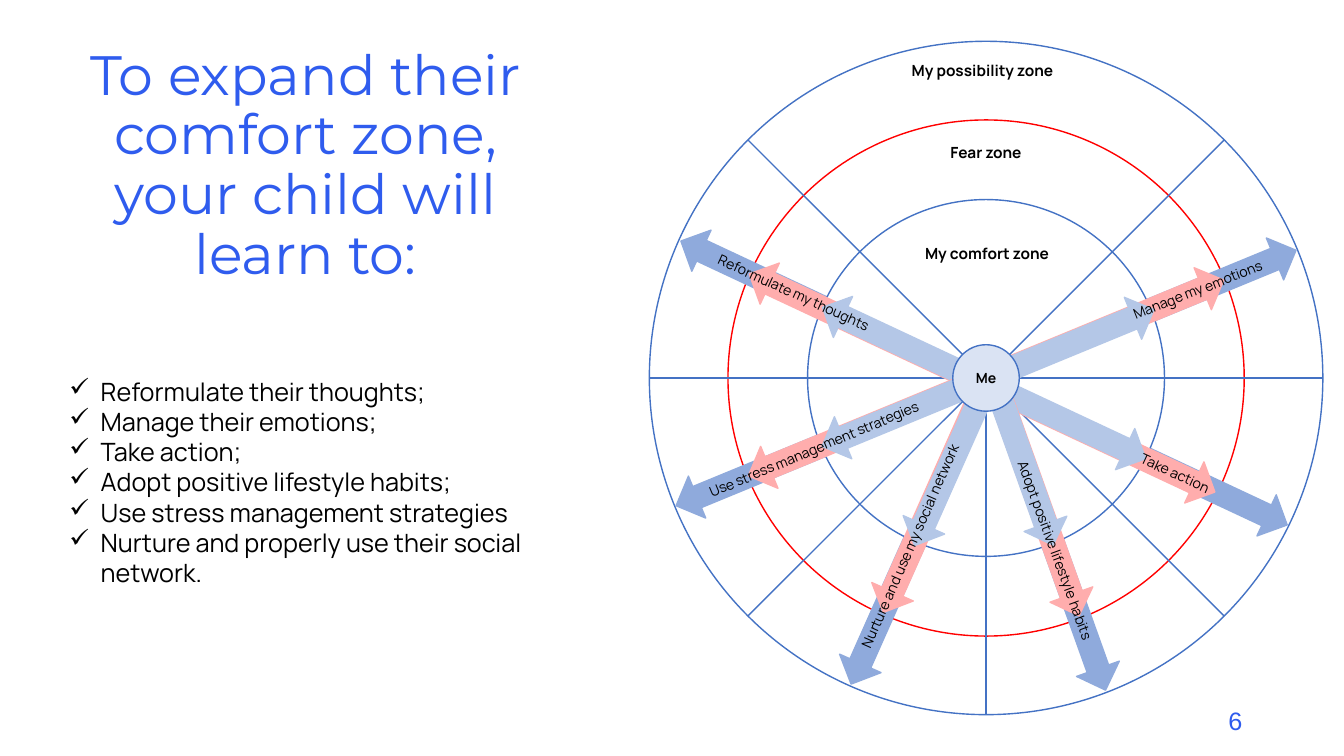
from lxml import etree
from pptx import Presentation
from pptx import util as u
from pptx.dml.color import RGBColor
from pptx.enum import shapes, text
from pptx.oxml.ns import qn

PX = 9144  # 100 px to the inch
INK = RGBColor(0x00, 0x00, 0x00)
WHITE = RGBColor(0xFF, 0xFF, 0xFF)
TITLE = RGBColor(0x2F, 0x5C, 0xEE)
BLUE = RGBColor(0x44, 0x72, 0xC4)
RED = RGBColor(0xFF, 0x00, 0x00)
DEEP = RGBColor(0x8F, 0xAA, 0xDC)
PINK = RGBColor(0xFF, 0xAD, 0xAD)
PALE = RGBColor(0xB4, 0xC7, 0xE7)
CORE = RGBColor(0xDA, 0xE3, 0xF3)

HUB_X, HUB_Y = 978, 375
OUTER, FEAR, COMFORT, ME = 334, 256, 177, 33
ARROW_H = 45
MID = text.PP_ALIGN.CENTER

SKILLS = [
    "Reformulate their thoughts;",
    "Manage their emotions;",
    "Take action;",
    "Adopt positive lifestyle habits;",
    "Use stress management strategies",
    "Nurture and properly use their social network.",
]
# turn, then centre x, centre y and length of the arrow for each zone
AXES = [
    (25.1, {DEEP: (976, 380, 664), PINK: (974, 380, 510), PALE: (976, 380, 354)}),
    (337.6, {DEEP: (978, 375, 665), PINK: (978, 375, 510), PALE: (980, 375, 356)}),
    (294, {DEEP: (921, 506, 378), PINK: (932, 482, 275), PALE: (946, 454, 191)}),
    (250.3, {DEEP: (1034, 510, 371), PINK: (1024, 482, 274), PALE: (1012, 450, 193)}),
]
ZONES = [
    ("My possibility zone", 882, 56, 185),
    ("Fear zone", 920, 137, 116),
    ("My comfort zone", 900, 237, 158),
]
LABELS = [
    ("Reformulate my thoughts", 661, 277, 252, 24.6, MID),
    ("Take action", 1117, 465, 136, 24.7, text.PP_ALIGN.LEFT),
    ("Use stress management strategies", 657, 432, 301, 337.2, MID),
    ("Manage my emotions", 1087, 274, 202, 338.5, MID),
    ("Nurture and use my social network", 757, 528, 292, 293.8, MID),
    ("Adopt positive lifestyle habits", 897, 532, 298, 69.8, MID),
]


def px(*vals):
    return [u.Emu(v * PX) for v in vals]


def style(para, size, color=INK, face="Manrope", bold=False, align=MID):
    para.alignment = align
    font = para.font
    font.size, font.name, font.bold = u.Pt(size), face, bold
    font.color.rgb = color


def add_box(slide, x, y, w, h, wrap=True):
    box = slide.shapes.add_textbox(*px(x, y, w, h))
    box.text_frame.word_wrap = wrap
    return box


def add_label(slide, words, x, y, w, turn=0, align=MID, size=10, bold=False):
    box = add_box(slide, x, y, w, 28, wrap=not bold)
    box.rotation = turn
    para = box.text_frame.paragraphs[0]
    para.text = words
    style(para, size, bold=bold, align=align)


def add_form(slide, kind, x, y, w, h, fill, line):
    """Add a preset shape centred on x, y."""
    form = slide.shapes.add_shape(kind, *px(x - w / 2, y - h / 2, w, h))
    form.shadow.inherit = False
    form.fill.solid()
    form.fill.fore_color.rgb = fill
    form.line.color.rgb = line
    form.line.width = u.Pt(1)
    return form


def add_ring(slide, radius, line, fill=WHITE):
    size = 2 * radius
    return add_form(slide, shapes.MSO_SHAPE.OVAL, HUB_X, HUB_Y, size, size, fill, line)


def add_arrow(slide, axis, color):
    turn, spans = axis
    x, y, size = spans[color]
    kind = shapes.MSO_SHAPE.LEFT_RIGHT_ARROW
    add_form(slide, kind, x, y, size, ARROW_H, color, color).rotation = turn


def add_spoke(slide, x1, y1, x2, y2):
    """Draw a line between two offsets from the hub."""
    ends = px(HUB_X + x1, HUB_Y + y1, HUB_X + x2, HUB_Y + y2)
    line = slide.shapes.add_connector(shapes.MSO_CONNECTOR.STRAIGHT, *ends)
    line.line.color.rgb = BLUE
    line.line.width = u.Pt(1)
    etree.SubElement(line._element.spPr, qn("a:effectLst"))


def add_title(slide):
    title = slide.shapes.title
    title.left, title.top, title.width, title.height = px(58, 123, 490, 145)
    frame = title.text_frame
    frame.word_wrap = True
    frame.vertical_anchor = text.MSO_ANCHOR.MIDDLE
    frame.margin_bottom = px(65)[0]
    para = frame.paragraphs[0]
    para.text = "To expand their comfort zone, your child will learn to:"
    para.line_spacing = 0.9
    style(para, 39.6, TITLE, "Montserrat")


def add_list(slide):
    frame = add_box(slide, 59, 338, 552, 222).text_frame
    frame.margin_top = px(35)[0]
    for i, skill in enumerate(SKILLS):
        para = frame.add_paragraph() if i else frame.paragraphs[0]
        para.text = skill
        props = para._p.get_or_add_pPr()
        props.set("marL", str(31 * PX))
        props.set("indent", str(-31 * PX))
        etree.SubElement(props, qn("a:buChar"), char="✓")
        style(para, 18, align=text.PP_ALIGN.LEFT)


def add_wheel(slide):
    add_ring(slide, OUTER, BLUE)
    add_ring(slide, FEAR, RED)
    for axis in reversed(AXES):
        add_arrow(slide, axis, DEEP)
    add_ring(slide, COMFORT, BLUE)

    slant = round(OUTER / 2 ** 0.5)
    add_spoke(slide, -slant, -slant, slant, slant)
    add_spoke(slide, -slant, slant, slant, -slant)
    add_spoke(slide, 0, OUTER, 0, ME)
    add_spoke(slide, -OUTER, 0, OUTER, 0)

    for axis in AXES:
        add_arrow(slide, axis, PINK)
        add_arrow(slide, axis, PALE)
    for zone in ZONES:
        add_label(slide, *zone, size=11, bold=True)
    for label in LABELS:
        add_label(slide, *label)

    frame = add_ring(slide, ME, BLUE, CORE).text_frame
    frame.vertical_anchor = text.MSO_ANCHOR.MIDDLE
    frame.paragraphs[0].text = "Me"
    style(frame.paragraphs[0], 10, bold=True)


def add_number(slide):
    para = add_box(slide, 942, 695, 300, 40).text_frame.paragraphs[0]
    para.text = "6"
    style(para, 18, TITLE, "Arial", align=text.PP_ALIGN.RIGHT)


def main():
    deck = Presentation()
    deck.slide_width, deck.slide_height = u.Inches(13.33), u.Inches(7.5)
    slide = deck.slides.add_slide(deck.slide_layouts.get_by_name("Title Only"))
    add_title(slide)
    add_number(slide)
    add_list(slide)
    add_wheel(slide)
    deck.save("out.pptx")


if __name__ == "__main__":
    main()
